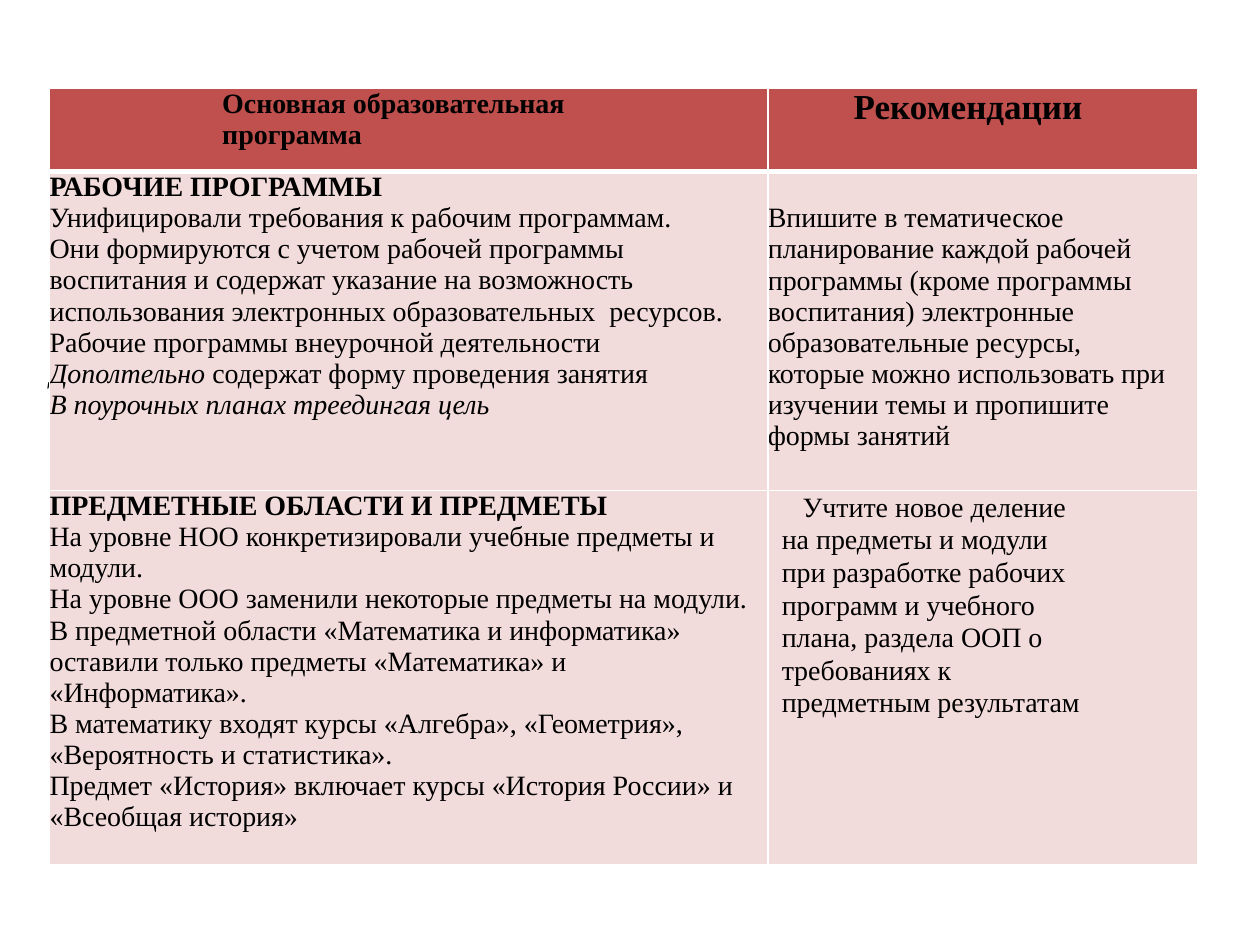
from lxml import etree
from pptx import Presentation
from pptx.dml.color import RGBColor
from pptx.oxml.ns import qn
from pptx.util import Cm, Pt

RED = RGBColor(0xC0, 0x50, 0x4D)
PINK = RGBColor(0xF2, 0xDC, 0xDB)
BLACK = RGBColor(0, 0, 0)
WHITE = RGBColor(0xFF, 0xFF, 0xFF)
BLANK_LAYOUT = 6

BOLD = {"bold": True}
ITALIC = {"italic": True}
HEADING = {"bold": True, "size": Pt(20)}

COLUMN_WIDTHS = [14.48, 8.66]
ROW_HEIGHTS = [1.68, 6.43, 7.54]

# Each cell: paragraphs made of (text, format) spans, then its layout in cm.
ROWS = [
    [
        ([[("Основная образовательная программа", BOLD)]],
         {"indent": 3.48, "right": 1.5}),
        ([[("Рекомендации", HEADING)]], {"indent": 1.73}),
    ],
    [
        ([
            [("РАБОЧИЕ ПРОГРАММЫ", BOLD)],
            [("Унифицировали требования к рабочим программам.", {})],
            [("Они формируются с учетом рабочей программы воспитания и "
              "содержат указание на возможность использования электронных "
              "образовательных  ресурсов.", {})],
            [("Рабочие программы внеурочной деятельности", {})],
            [("Дополтельно", ITALIC), (" содержат форму проведения занятия", {})],
            [("В поурочных планах треедингая цель", ITALIC)],
        ], {"right": 0.74}),
        ([
            [("Впишите в тематическое планирование каждой рабочей программы "
              "(кроме программы воспитания) электронные образовательные "
              "ресурсы, которые можно использовать при изучении темы и "
              "пропишите формы занятий", {})],
        ], {"top": 0.63, "right": 0.56}),
    ],
    [
        ([
            [("ПРЕДМЕТНЫЕ ОБЛАСТИ И ПРЕДМЕТЫ", BOLD)],
            [("На уровне НОО конкретизировали учебные предметы и модули.", {})],
            [("На уровне ООО заменили некоторые предметы на модули. "
              "В предметной области «Математика и информатика» оставили "
              "только предметы «Математика» и «Информатика».", {})],
            [("В математику входят курсы «Алгебра», «Геометрия», "
              "«Вероятность и статистика».", {})],
            [("Предмет «История» включает курсы «История России» и", {})],
            [("«Всеобщая история»", {})],
        ], {}),
        ([
            [("Учтите новое деление на предметы и модули при разработке "
              "рабочих программ и учебного плана, раздела ООП о требованиях "
              "к предметным результатам", {})],
        ], {"indent": 0.28, "first_line": 0.42, "right": 2.24, "spacing": 1.05}),
    ],
]


class SlideBuilder:
    def __init__(self, slide):
        self.slide = slide
        self.text_format = {"name": "Times New Roman", "size": Pt(16),
                            "bold": False, "italic": False}

    def add_table(self, left, top, widths, heights, rows):
        frame = self.slide.shapes.add_table(
            len(heights), len(widths), Cm(left), Cm(top),
            Cm(sum(widths)), Cm(sum(heights)))
        table = frame.table
        table.horz_banding = False
        for column, width in zip(table.columns, widths):
            column.width = Cm(width)
        for row, height in zip(table.rows, heights):
            row.height = Cm(height)
        for row_index, cells in enumerate(rows):
            is_header = row_index == 0
            for column_index, (paragraphs, layout) in enumerate(cells):
                cell = table.cell(row_index, column_index)
                top_line = 3 if row_index == 1 else 1
                self.add_borders(cell, {"lnL": 1, "lnR": 1, "lnT": top_line,
                                        "lnB": 3 if is_header else 1})
                cell.fill.solid()
                cell.fill.fore_color.rgb = RED if is_header else PINK
                for side in ("left", "top", "right", "bottom"):
                    setattr(cell, f"margin_{side}", Cm(layout.get(side, 0)))
                self.add_text(cell.text_frame, paragraphs, layout)

    def add_borders(self, cell, widths):
        properties = cell._tc.get_or_add_tcPr()
        for tag, width in widths.items():
            line = etree.SubElement(properties, qn(f"a:{tag}"), w=str(Pt(width)))
            fill = etree.SubElement(line, qn("a:solidFill"))
            etree.SubElement(fill, qn("a:srgbClr"), val=str(WHITE))

    def add_text(self, text_frame, paragraphs, layout):
        for index, spans in enumerate(paragraphs):
            para = text_frame.paragraphs[0] if index == 0 else text_frame.add_paragraph()
            para.line_spacing = layout.get("spacing", 1.0)
            properties = para._p.get_or_add_pPr()
            properties.set("marL", str(Cm(layout.get("indent", 0))))
            properties.set("indent", str(Cm(layout.get("first_line", 0))))
            for text, changes in spans:
                span = para.add_run()
                span.text = text
                span.font.color.rgb = BLACK
                for name, value in {**self.text_format, **changes}.items():
                    setattr(span.font, name, value)


def main():
    deck = Presentation()
    deck.slide_width, deck.slide_height = Cm(25.4), Cm(19.05)
    page = deck.slides.add_slide(deck.slide_layouts[BLANK_LAYOUT])
    builder = SlideBuilder(page)
    builder.add_table(1.0, 1.78, COLUMN_WIDTHS, ROW_HEIGHTS, ROWS)
    deck.save("out.pptx")


if __name__ == "__main__":
    main()
